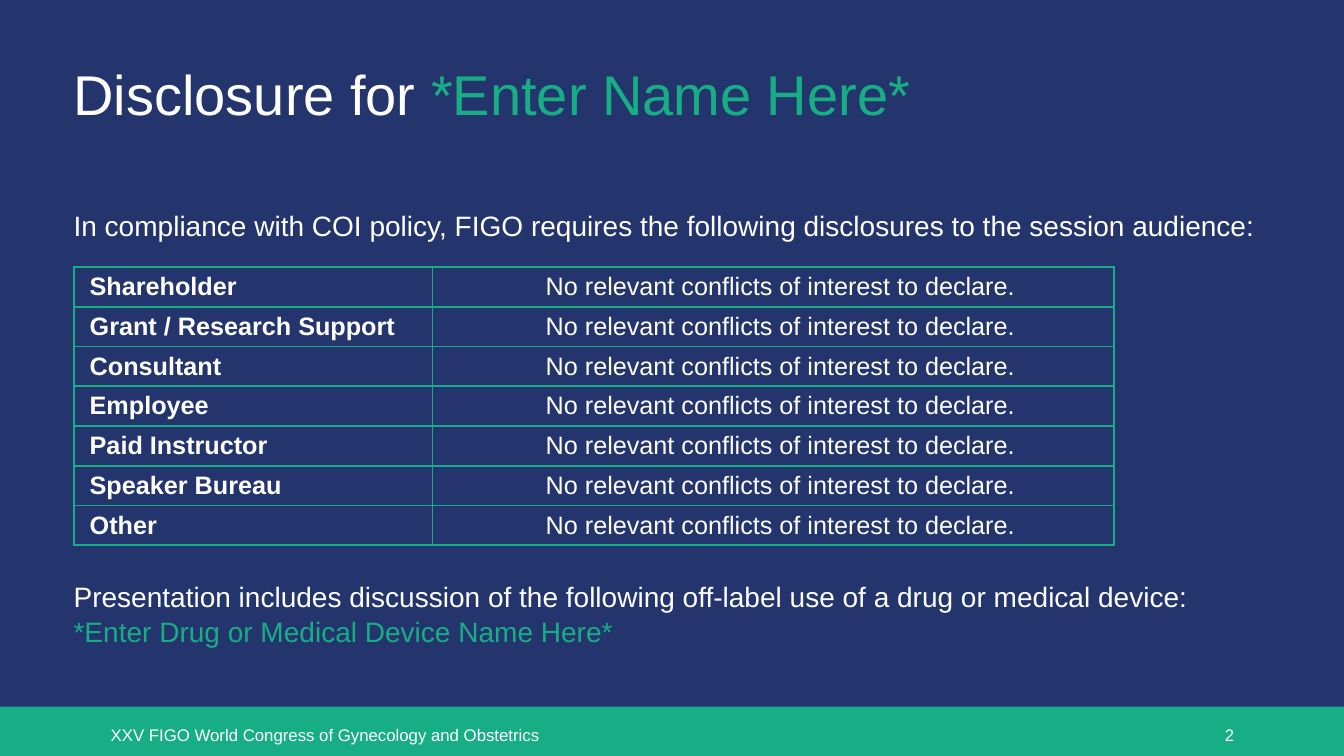
import pptx
import pptx.dml.color
import pptx.enum.shapes
import pptx.enum.text
import pptx.oxml
import pptx.oxml.ns
import pptx.util
from pptx.util import Inches

NAVY, GREEN, WHITE = "24356D", "18AE85", "FFFFFF"
ALIGN = pptx.enum.text.PP_ALIGN
ANCHOR = pptx.enum.text.MSO_ANCHOR
CATEGORIES = ["Shareholder", "Grant / Research Support", "Consultant", "Employee",
              "Paid Instructor", "Speaker Bureau", "Other"]
NO_CONFLICT = "No relevant conflicts of interest to declare."


def rgb(value):
    return pptx.dml.color.RGBColor.from_string(value)


def set_font(font, size, color=WHITE, bold=False):
    font.name, font.size, font.bold = "Arial", pptx.util.Pt(size), bold
    font.color.rgb = rgb(color)


def place(box, left, top, width, height):
    box.left, box.top = Inches(left), Inches(top)
    box.width, box.height = Inches(width), Inches(height)


def fill_title(title):
    place(title, 0.63, 0.51, 10.19, 0.82)
    frame = title.text_frame
    frame.auto_size = pptx.enum.text.MSO_AUTO_SIZE.NONE
    frame.vertical_anchor = ANCHOR.MIDDLE
    para = frame.paragraphs[0]
    para.alignment = ALIGN.LEFT
    for text, color in (("Disclosure for ", WHITE), ("*Enter Name Here*", GREEN)):
        span = para.add_run()
        span.text = text
        set_font(span.font, 40, color)


def fill_body(body, lines):
    """Each line is text, colour and the space before it in points."""
    place(body, 0.63, 1.76, 12.27, 5.09)
    frame = body.text_frame
    frame.auto_size = pptx.enum.text.MSO_AUTO_SIZE.NONE
    frame.vertical_anchor = ANCHOR.TOP
    frame.margin_top = Inches(0.31)
    for number, (text, color, gap) in enumerate(lines):
        para = frame.add_paragraph() if number else frame.paragraphs[0]
        para.text = text
        para.space_before = pptx.util.Pt(gap)
        properties = para._p.get_or_add_pPr()
        properties.set("marL", "0")
        properties.set("indent", "0")
        pptx.oxml.ns.qn("a:buNone")
        properties.append(pptx.oxml.parse_xml(
            f'<a:buNone {pptx.oxml.ns.nsdecls("a")}/>'))
        set_font(para.font, 20, color)


def add_label(page, text, left, width, alignment):
    box = page.shapes.add_textbox(Inches(left), Inches(7.14), Inches(width), Inches(0.36))
    box.text_frame.word_wrap = True
    para = box.text_frame.paragraphs[0]
    para.text, para.alignment = text, alignment
    set_font(para.font, 12)


def add_footer_bar(page):
    bar = page.shapes.add_shape(pptx.enum.shapes.MSO_SHAPE.RECTANGLE,
                                Inches(0), Inches(7.01), Inches(13.33), Inches(0.49))
    bar.shadow.inherit = False
    bar.fill.solid()
    bar.fill.fore_color.rgb = rgb(GREEN)
    bar.line.fill.background()


def set_borders(cell, color, points):
    properties = cell._tc.get_or_add_tcPr()
    for index, side in enumerate(("lnL", "lnR", "lnT", "lnB")):
        properties.insert(index, pptx.oxml.parse_xml(
            f'<a:{side} {pptx.oxml.ns.nsdecls("a")} w="{int(points * 12700)}">'
            f'<a:solidFill><a:srgbClr val="{color}"/></a:solidFill></a:{side}>'))


def fill_cell(cell, text, alignment, bold):
    cell.fill.background()
    cell.vertical_anchor = ANCHOR.MIDDLE
    cell.margin_left, cell.margin_right = Inches(0.16), Inches(0.02)
    cell.margin_top = cell.margin_bottom = Inches(0.01)
    para = cell.text_frame.paragraphs[0]
    para.text, para.alignment = text, alignment
    set_font(para.font, 18, bold=bold)
    set_borders(cell, GREEN, 1.5)


def add_disclosures(page):
    table = page.shapes.add_table(len(CATEGORIES), 2, Inches(0.73), Inches(2.65),
                                  Inches(10.32), Inches(2.76)).table
    table.first_row = table.horz_banding = False
    table.columns[0].width, table.columns[1].width = Inches(3.56), Inches(6.76)
    for number, category in enumerate(CATEGORIES):
        fill_cell(table.cell(number, 0), category, ALIGN.LEFT, True)
        fill_cell(table.cell(number, 1), NO_CONFLICT, ALIGN.CENTER, False)


def main():
    deck = pptx.Presentation()
    deck.slide_width, deck.slide_height = Inches(13.33), Inches(7.5)
    page = deck.slides.add_slide(deck.slide_layouts[1])
    page.background.fill.solid()
    page.background.fill.fore_color.rgb = rgb(NAVY)

    # Footer
    add_footer_bar(page)
    add_label(page, "2", 9.56, 2.78, ALIGN.RIGHT)
    add_label(page, "XXV FIGO World Congress of Gynecology and Obstetrics", 1, 5.17, ALIGN.LEFT)

    # Title and statements, with room for the table between them
    fill_title(page.shapes.title)
    fill_body(page.placeholders[1], [
        ("In compliance with COI policy, FIGO requires the following disclosures "
         "to the session audience:", WHITE, 0),
        ("Presentation includes discussion of the following off-label use of a drug "
         "or medical device:", WHITE, 241),
        ("*Enter Drug or Medical Device Name Here*", GREEN, 1),
    ])

    # Disclosure table
    add_disclosures(page)
    deck.save("out.pptx")


if __name__ == "__main__":
    main()
